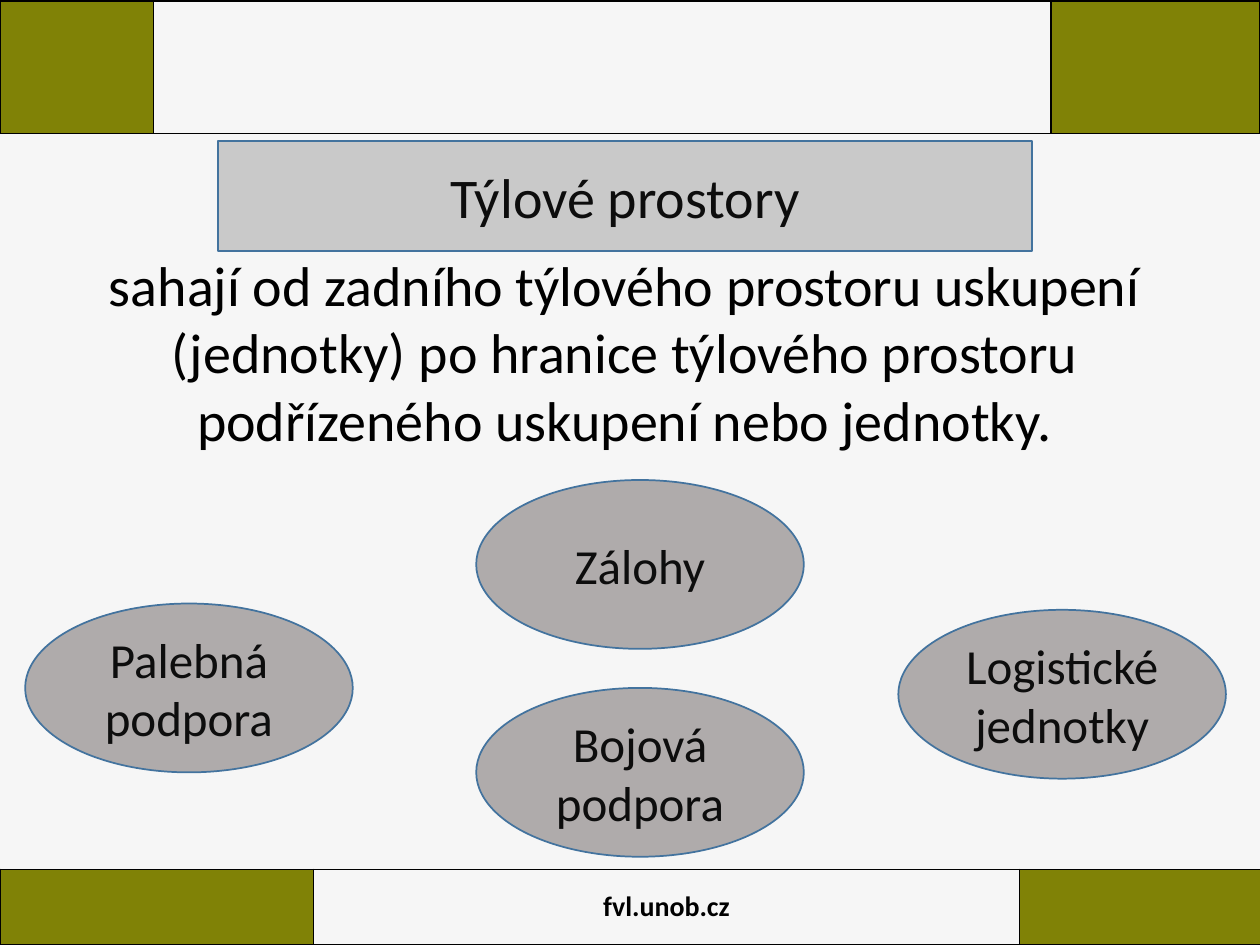
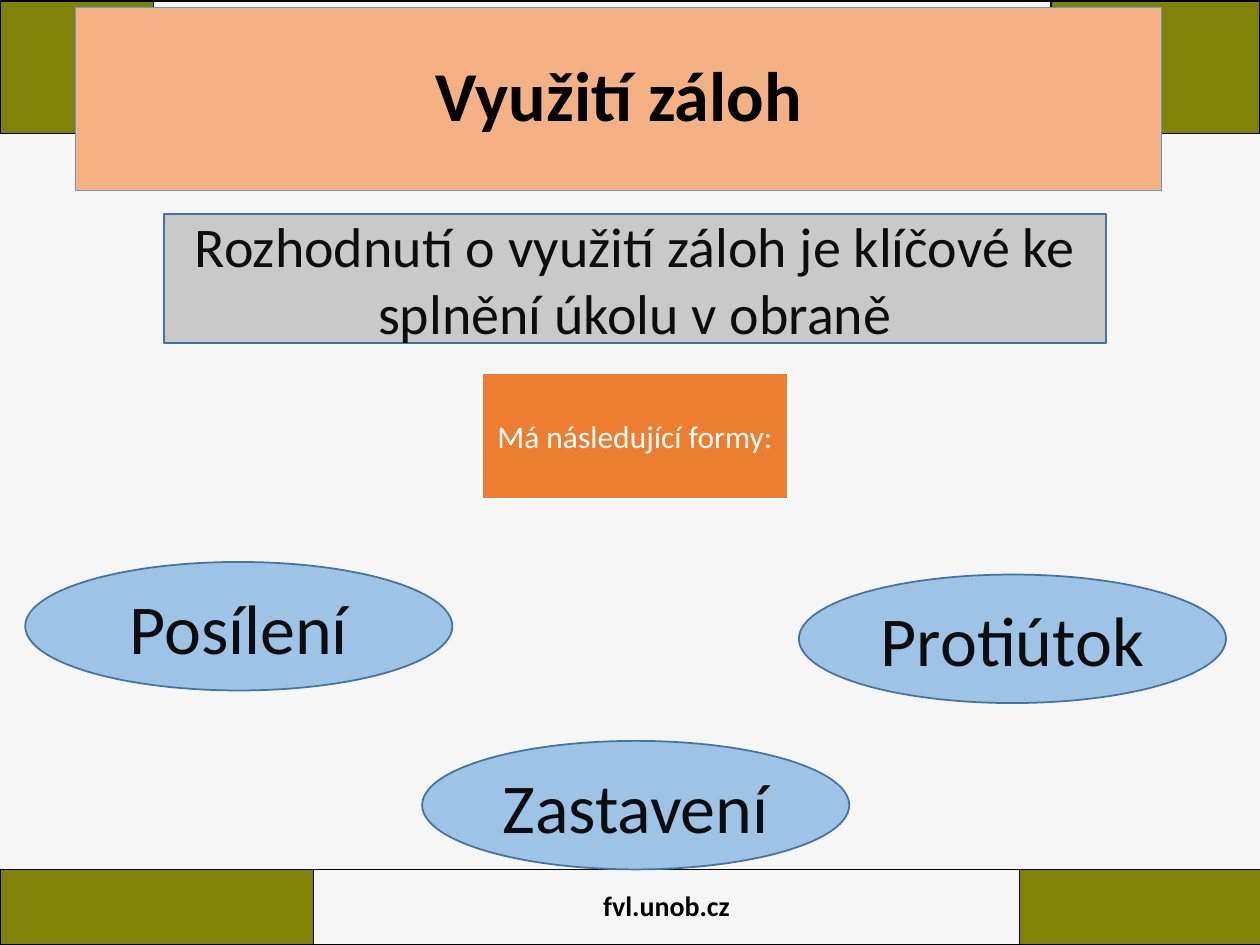
from dataclasses import dataclass, replace

from lxml.etree import SubElement as Sub
from pptx import Presentation
from pptx.dml.color import RGBColor as RGB
from pptx.enum.shapes import MSO_SHAPE as Kind
from pptx.enum.text import MSO_ANCHOR as Anchor, MSO_AUTO_SIZE as Auto, PP_ALIGN as Align
from pptx.oxml.ns import qn
from pptx.slide import Slide
from pptx.table import _Cell as Cell
from pptx.text.text import TextFrame
from pptx.util import Pt

PX = 9144  # 100 px to the inch
FONT = "Calibri"
PAPER, OLIVE, BLACK, WHITE = "F6F6F6", "808206", "000000", "FFFFFF"
INK, GREY, STONE, SKY = "0D0D0D", "C9C9C9", "AFABAB", "9DC3E6"
PEACH, ORANGE, EDGE, BLUE = "F4B183", "ED7D31", "43739E", "5B9BD5"


@dataclass(frozen=True)
class Style:
    size: int
    ink: str = INK
    bold: bool = False
    lead: float | None = None


@dataclass(frozen=True)
class Look:
    kind: Kind
    fill: str
    style: Style
    edge: str = EDGE
    width: float = 1


@dataclass(frozen=True)
class Box:
    text: str
    x: int
    y: int
    w: int
    h: int


@dataclass(frozen=True)
class Band:
    y: int
    h: int
    cols: tuple[int, int, int]
    text: str = ""


BANDS = (
    Band(690, 60, (249, 560, 192), "fvl.unob.cz"),
    Band(1, 105, (122, 712, 166)),
)
FOOT = Style(16, BLACK, True)
BODY = Style(32, BLACK)
TITLE = Look(Kind.RECTANGLE, PEACH, Style(40, BLACK, True, 0.9), BLUE, 0.5)
PANEL = Look(Kind.RECTANGLE, GREY, Style(32))
LABEL = Look(Kind.RECTANGLE, ORANGE, Style(18, WHITE), WHITE, 1.5)
UNIT = Look(Kind.OVAL, STONE, Style(28))
FORM = replace(UNIT, fill=SKY, style=Style(40))


def tint(code: str) -> RGB:
    return RGB.from_string(code)


def px(*nums: int) -> list[int]:
    return [num * PX for num in nums]


def write(frame: TextFrame, text: str, style: Style) -> None:
    frame.text = text
    para = frame.paragraphs[0]
    para.alignment = Align.CENTER
    if style.lead:
        para.line_spacing = style.lead
    for run in para.runs:
        font = run.font
        font.name, font.size, font.bold = FONT, Pt(style.size), style.bold
        font.color.rgb = tint(style.ink)


def border(cell: Cell) -> None:
    """Give all four sides of a cell a thin black line."""
    props = cell._tc.get_or_add_tcPr()
    for side in "LRTB":
        line = Sub(props, qn(f"a:ln{side}"), w=str(Pt(1)))
        Sub(Sub(line, qn("a:solidFill")), qn("a:srgbClr"), val=BLACK)


def add_band(slide: Slide, band: Band) -> None:
    spot = px(0, band.y, sum(band.cols), band.h)
    table = slide.shapes.add_table(1, len(band.cols), *spot).table
    table.first_row = table.horz_banding = False
    for col, wide in zip(table.columns, px(*band.cols)):
        col.width = wide
    left, mid, right = table.rows[0].cells
    for cell in (left, mid, right):
        border(cell)
    for cell in (left, right):
        cell.fill.solid()
        cell.fill.fore_color.rgb = tint(OLIVE)
    mid.fill.background()
    if band.text:
        mid.vertical_anchor = Anchor.MIDDLE
        write(mid.text_frame, band.text, FOOT)


def add_box(slide: Slide, look: Look, box: Box) -> None:
    shape = slide.shapes.add_shape(look.kind, *px(box.x, box.y, box.w, box.h))
    shape.shadow.inherit = False
    shape.fill.solid()
    shape.fill.fore_color.rgb = tint(look.fill)
    shape.line.color.rgb = tint(look.edge)
    shape.line.width = Pt(look.width)
    frame = shape.text_frame
    frame.word_wrap = True
    frame.vertical_anchor = Anchor.MIDDLE
    write(frame, box.text, look.style)


def add_body(slide: Slide, box: Box) -> None:
    frame = slide.shapes.add_textbox(*px(box.x, box.y, box.w, box.h)).text_frame
    frame.word_wrap = True
    frame.auto_size = Auto.SHAPE_TO_FIT_TEXT
    write(frame, box.text, BODY)


def add_ovals(slide: Slide, look: Look, w: int, h: int,
              spots: tuple[tuple[str, int, int], ...]) -> None:
    for text, x, y in spots:
        add_box(slide, look, Box(text, x, y, w, h))


def add_slide(deck: Presentation) -> Slide:
    slide = deck.slides.add_slide(deck.slide_layouts[6])
    for band in BANDS:
        add_band(slide, band)
    return slide


def draw_rear(slide: Slide) -> None:
    add_box(slide, PANEL, Box("Týlové prostory", 173, 112, 646, 87))
    add_body(slide, Box(
        "sahají od zadního týlového prostoru uskupení (jednotky) po hranice "
        "týlového prostoru podřízeného uskupení nebo jednotky.",
        43, 194, 906, 172))
    add_ovals(slide, UNIT, 260, 134, (
        ("Palebná podpora", 20, 479),
        ("Bojová podpora", 378, 546),
        ("Zálohy", 378, 381),
        ("Logistické jednotky", 713, 484),
    ))


def draw_use(slide: Slide) -> None:
    add_box(slide, TITLE, Box("Využití záloh", 60, 6, 862, 145))
    add_box(slide, PANEL, Box(
        "Rozhodnutí o využití záloh je klíčové ke splnění úkolu v obraně",
        130, 170, 748, 102))
    add_box(slide, LABEL, Box("Má následující formy:", 382, 296, 244, 100))
    add_ovals(slide, FORM, 339, 102, (
        ("Posílení", 20, 446),
        ("Zastavení", 335, 588),
        ("Protiútok", 634, 456),
    ))


def main() -> None:
    deck = Presentation()
    deck.slide_width, deck.slide_height = px(1000, 750)
    back = deck.slide_master.background.fill
    back.solid()
    back.fore_color.rgb = tint(PAPER)
    for draw in (draw_rear, draw_use):
        draw(add_slide(deck))
    deck.save("out.pptx")


if __name__ == "__main__":
    main()
